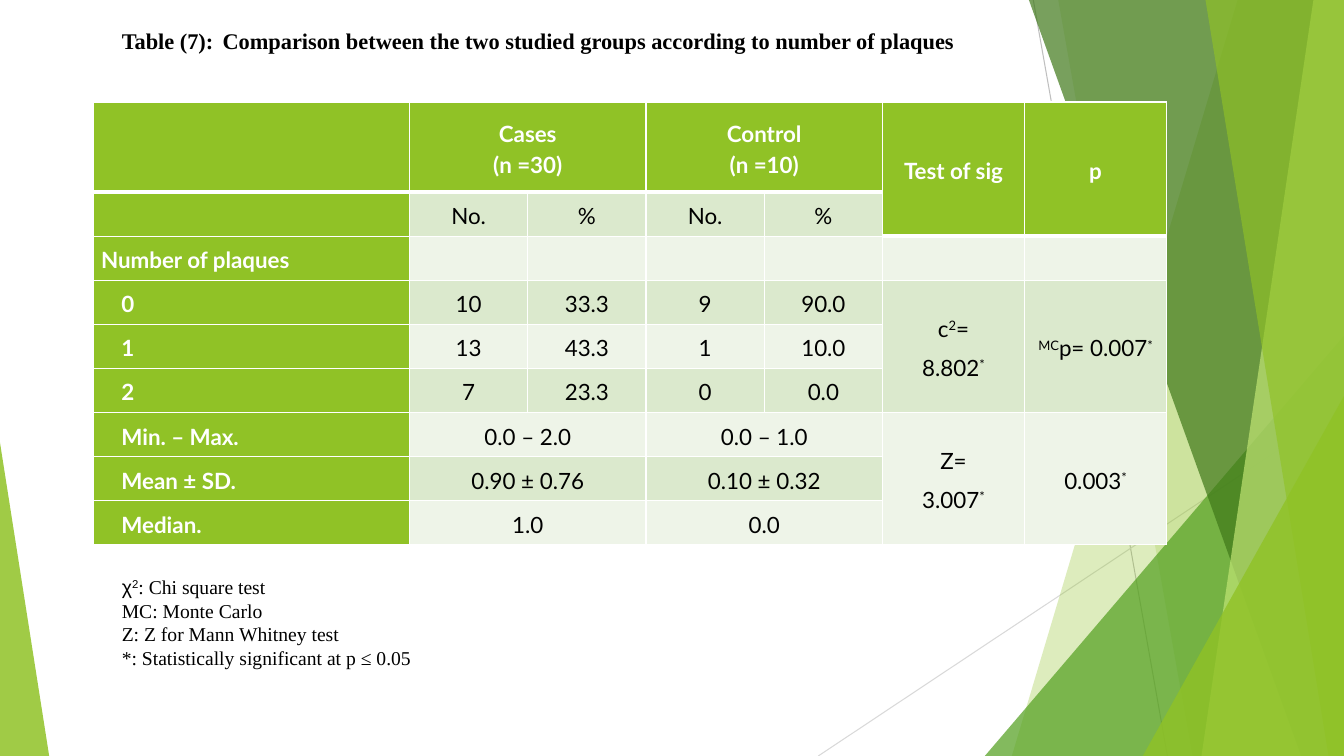
from lxml import etree
from pptx import Presentation
from pptx.dml.color import RGBColor
from pptx.enum import shapes, text
from pptx.oxml import ns
from pptx.util import Cm, Pt

WHITE = RGBColor(0xFF, 0xFF, 0xFF)
BLACK = RGBColor(0, 0, 0)
LIME = RGBColor(0x90, 0xC2, 0x26)
LEAF = RGBColor(0x54, 0xA0, 0x21)
FOREST = RGBColor(0x3F, 0x78, 0x19)
PALE_LIME = RGBColor(0xC0, 0xE4, 0x74)
BAND_DARK = RGBColor(0xDB, 0xE9, 0xCD)
BAND_LIGHT = RGBColor(0xEE, 0xF4, 0xE8)
GREY = RGBColor(0xBF, 0xBF, 0xBF)
LIGHT_GREY = RGBColor(0xD9, 0xD9, 0xD9)

SLIDE_WIDTH, SLIDE_HEIGHT = 33.87, 19.05  # cm
SERIF, SANS = "Times New Roman", "Lato"

# "|" starts a paragraph, "^" switches superscript on and off
STUB = ["", "", "Number of plaques", "0", "1", "2", "Min. – Max.", "Mean ± SD.", "Median."]
VALUES = {
    0: {1: "Cases\n(n =30)", 3: "Control\n(n =10)", 5: "Test of sig", 6: "p"},
    1: {1: "No.", 2: "%", 3: "No.", 4: "%"},
    3: {1: "10", 2: "33.3", 3: "9", 4: "90.0", 5: "c^2^=|8.802^*", 6: "^MC^p= 0.007^*"},
    4: {1: "13", 2: "43.3", 3: "1", 4: "10.0"},
    5: {1: "7", 2: "23.3", 3: "0", 4: "0.0"},
    6: {1: "0.0 – 2.0", 3: "0.0 – 1.0", 5: "Z=|3.007^*", 6: "0.003^*"},
    7: {1: "0.90 ± 0.76", 3: "0.10 ± 0.32"},
    8: {1: "1.0", 3: "0.0"},
}
COLUMN_WIDTHS = [7.96] + [2.98] * 4 + [3.58] * 2
ROW_HEIGHTS = [2.27] + [1.11] * 8


def style_font(font, name, size, color, bold):
    font.name, font.size, font.bold = name, Pt(size), bold
    font.color.rgb = color


def write_spans(para, content):
    """Write text whose odd "^" parts are superscript."""
    if "^" not in content:
        para.text = content
        return
    for index, part in enumerate(content.split("^")):
        if part:
            span = para.add_run()
            span.text = part
            if index % 2:
                span.font._element.set("baseline", "30000")


def paint(shape, color, opacity):
    shape.shadow.inherit = False
    shape.line.fill.background()
    shape.fill.solid()
    shape.fill.fore_color.rgb = color
    tint = shape.element.spPr.find(".//" + ns.qn("a:srgbClr"))
    etree.SubElement(tint, ns.qn("a:alpha")).set("val", str(opacity * 1000))


def add_hairline(page, start, end, color):
    line = page.shapes.add_connector(
        shapes.MSO_CONNECTOR.STRAIGHT, *[Cm(value) for value in start + end])
    line.line.color.rgb = color
    line.line.width = Pt(0.75)
    etree.SubElement(line.element.spPr, ns.qn("a:effectLst"))


def add_ribbon(page, top_x, bottom_x, right, bottom, color, opacity):
    """Band between a slanted left edge and the right side of the slide."""
    outline = page.shapes.build_freeform(Cm(top_x), 0)
    corners = [(right, 0), (right, bottom), (bottom_x, bottom)]
    outline.add_line_segments([(Cm(x), Cm(y)) for x, y in corners])
    paint(outline.convert_to_shape(), color, opacity)


def add_wedge(page, left, top, right, bottom, apex, color, opacity):
    wedge = page.shapes.add_shape(
        shapes.MSO_SHAPE.ISOSCELES_TRIANGLE,
        Cm(left), Cm(top), Cm(right - left), Cm(bottom - top))
    wedge.adjustments[0] = apex
    paint(wedge, color, opacity)


def add_facets(page, left, top, width, height):
    right, bottom = left + width, top + height
    add_hairline(page, (left + 1.22, top), (left + 4.6, bottom), GREY)
    add_hairline(page, (right, top + 10.24), (left - 4.2, bottom), LIGHT_GREY)

    def ribbon(top_x, bottom_x, color, opacity):
        add_ribbon(page, left + top_x, left + bottom_x, right, bottom, color, opacity)

    ribbon(6.37, 0.68, LIME, 30)
    ribbon(1.85, 5.23, LIME, 20)
    add_wedge(page, left, top + 8.46, right, bottom, 1, LEAF, 72)
    ribbon(1.11, 7.97, FOREST, 70)
    ribbon(8.28, 5.46, PALE_LIME, 70)
    ribbon(5.56, 8.66, LIME, 65)
    add_wedge(page, left + 3.98, top + 9.98, right, bottom, 1, LIME, 80)


def add_borders(cell, bottom_width):
    widths = {"a:lnL": 1, "a:lnR": 1, "a:lnT": 1, "a:lnB": bottom_width}
    properties = cell._tc.get_or_add_tcPr()
    for tag, width in widths.items():
        edge = etree.SubElement(properties, ns.qn(tag), w=str(Pt(width)))
        fill = etree.SubElement(edge, ns.qn("a:solidFill"))
        etree.SubElement(fill, ns.qn("a:srgbClr"), val=str(WHITE))


def fill_cell(cell, row, column):
    green = column == 0 or row == 0 or (row == 1 and column > 4)
    add_borders(cell, 3 if row == 0 or (row == 1 and column > 4) else 1)
    cell.fill.solid()
    cell.fill.fore_color.rgb = LIME if green else BAND_DARK if row % 2 else BAND_LIGHT
    cell.margin_left = cell.margin_right = Cm(0.19)
    cell.margin_top = cell.margin_bottom = 0
    cell.vertical_anchor = text.MSO_ANCHOR.MIDDLE
    content = STUB[row] if column == 0 else VALUES.get(row, {}).get(column, "")
    for index, line in enumerate(content.split("|")):
        para = cell.text_frame.add_paragraph() if index else cell.text_frame.paragraphs[0]
        write_spans(para, line)
        style_font(para.font, SANS, 16, WHITE if green else BLACK, green)
        para.line_spacing = 1.15
        para.space_before, para.space_after = Pt(4), Pt(2)
        para.alignment = text.PP_ALIGN.CENTER if column else text.PP_ALIGN.LEFT
        if column == 0 and row > 2:
            para._p.get_or_add_pPr().set("marL", str(Cm(0.51)))


def add_plaque_table(page, left, top, width, height):
    table = page.shapes.add_table(
        len(ROW_HEIGHTS), len(COLUMN_WIDTHS), Cm(left), Cm(top), Cm(width), Cm(height)).table
    table.first_row = table.horz_banding = False
    for column, size in zip(table.columns, COLUMN_WIDTHS):
        column.width = Cm(size)
    for row, size in zip(table.rows, ROW_HEIGHTS):
        row.height = Cm(size)
    for row in range(len(ROW_HEIGHTS)):
        for column in range(len(COLUMN_WIDTHS)):
            fill_cell(table.cell(row, column), row, column)
    # Group headings and summary rows span No. and %
    for row in (0, 6, 7, 8):
        for column in (1, 3):
            table.cell(row, column).merge(table.cell(row, column + 1))
    # Test and p columns span blocks of rows
    for first, last in ((0, 1), (3, 5), (6, 8)):
        for column in (5, 6):
            table.cell(first, column).merge(table.cell(last, column))


def add_text(page, left, top, width, height, lines, size, bold):
    box = page.shapes.add_textbox(Cm(left), Cm(top), Cm(width), Cm(height))
    box.text_frame.word_wrap = True
    for index, line in enumerate(lines):
        para = box.text_frame.add_paragraph() if index else box.text_frame.paragraphs[0]
        write_spans(para, line)
        style_font(para.font, SERIF, size, BLACK, bold)
    return box


def main():
    deck = Presentation()
    deck.slide_width, deck.slide_height = Cm(SLIDE_WIDTH), Cm(SLIDE_HEIGHT)
    page = deck.slides.add_slide(deck.slide_layouts[6])

    # Green facets at both sides
    add_facets(page, 24.82, 0, SLIDE_WIDTH - 24.82, SLIDE_HEIGHT)
    add_wedge(page, 0, 11.15, 1.24, SLIDE_HEIGHT, 0, LIME, 85)

    # Results table
    add_plaque_table(page, 2.36, 2.57, sum(COLUMN_WIDTHS), sum(ROW_HEIGHTS))

    # Title and legend
    add_text(page, 2.82, 0.56, 24.36, 0.9, [
        "Table (7):\tComparison between the two studied groups according to number of plaques",
    ], 16, True)
    legend = add_text(page, 2.82, 14.37, 24.36, 2.65, [
        "χ^2^: Chi square test",
        "MC: Monte Carlo",
        "Z: Z for Mann Whitney test",
        "*: Statistically significant at p ≤ 0.05",
    ], 14, False)
    for span in legend.text_frame.paragraphs[0].runs[:2]:
        span.font.name = "Arial"

    deck.save("out.pptx")


if __name__ == "__main__":
    main()
